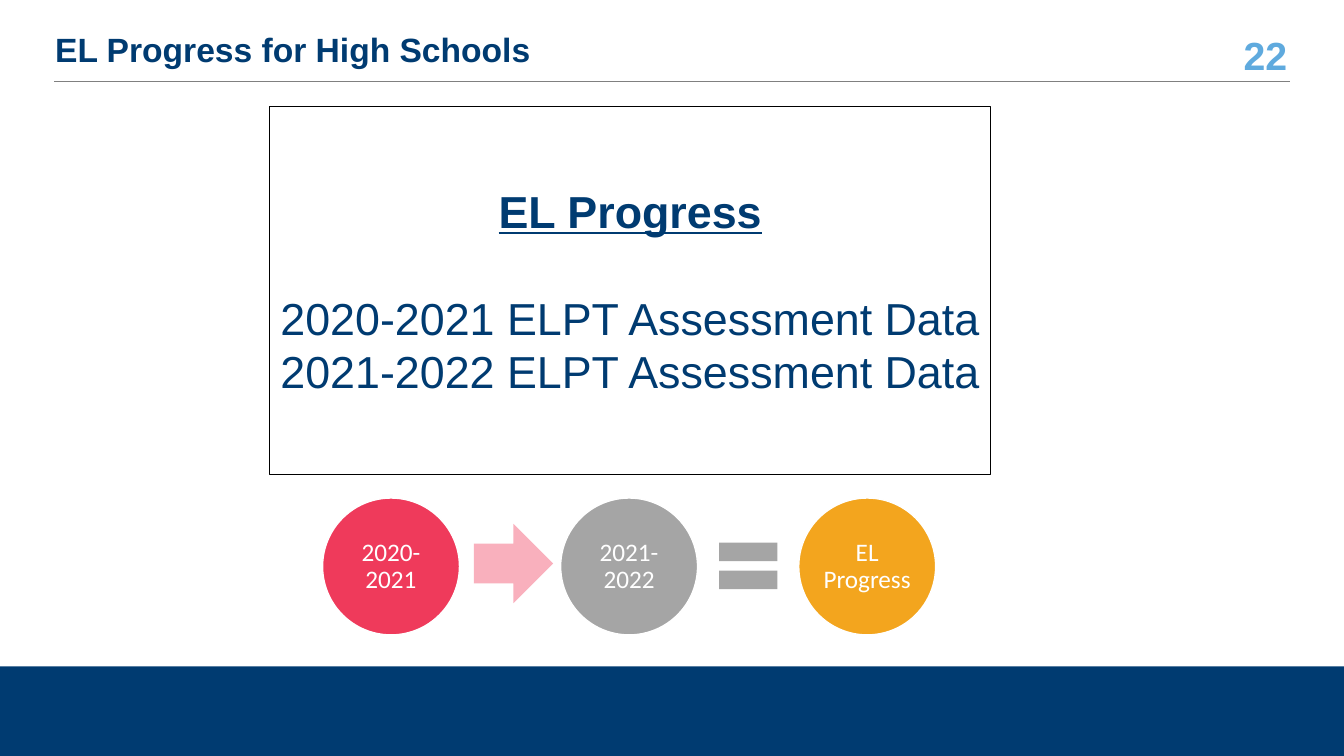
from pptx import Presentation
from pptx.dml.color import RGBColor
from pptx.enum import shapes, text
from pptx.oxml.ns import qn
from pptx.util import Cm, Pt

TITLE = "EL Progress for High Schools"
PAGE_NUMBER = "22"
PANEL_HEADING = "EL Progress"
PANEL_LINES = ["2020-2021 ELPT Assessment Data", "2021-2022 ELPT Assessment Data"]
CIRCLES = [("2020-2021", "red"), ("2021-2022", "gray"), ("EL Progress", "gold")]
# shape, colour, left offset from the circle before it, top (cm)
OPERATORS = [
    (shapes.MSO_SHAPE.RIGHT_ARROW, "pink", 3.81, 13.2),
    (shapes.MSO_SHAPE.MATH_EQUAL, "gray", 3.73, 13.26),
]

THEME = {
    "colors": {
        "navy": "003B71", "sky": "5FAADE", "rule": "808080", "black": "000000",
        "white": "FFFFFF", "red": "EF3A5B", "pink": "F9B0BD", "gray": "A5A5A5",
        "gold": "F3A51E",
    },
    "sizes": {"title": 24, "number": 28, "panel": 32, "circle": 18},
    "fonts": {"main": "Arial", "circle": "Calibri"},
}

PAGE_WIDTH, PAGE_HEIGHT = 33.87, 19.05
FOOTER_TOP = 16.79
CIRCLE_LEFT, CIRCLE_TOP, CIRCLE_SIZE, CIRCLE_STEP = 8.13, 12.55, 3.45, 6.0
OPERATOR_SIZE = 2.0


def color(name):
    return RGBColor.from_string(THEME["colors"][name])


def add_shape(page, kind, left, top, width, height, fill=None, line=None, weight=1):
    shape = page.shapes.add_shape(kind, Cm(left), Cm(top), Cm(width), Cm(height))
    shape.shadow.inherit = False
    if fill:
        shape.fill.solid()
        shape.fill.fore_color.rgb = color(fill)
    else:
        shape.fill.background()
    if line:
        shape.line.color.rgb = color(line)
        shape.line.width = Pt(weight)
    else:
        shape.line.fill.background()
    return shape


def write(box, lines, size, tint, align, font="main", bold=False, wrap=True):
    """Fill a shape with vertically centred paragraphs and return them."""
    frame = box.text_frame
    frame.word_wrap = wrap
    frame.vertical_anchor = text.MSO_ANCHOR.MIDDLE
    frame.text = "\n".join(lines)
    for para in frame.paragraphs:
        para.alignment = align
        para.font.name = THEME["fonts"][font]
        para.font.size = Pt(THEME["sizes"][size])
        para.font.bold = bold
        para.font.color.rgb = color(tint)
    return frame.paragraphs


def add_header(page):
    title = page.shapes.add_textbox(Cm(1.14), Cm(0.76), Cm(29.46), Cm(1.07))
    para = write(title, [TITLE], "title", "navy", text.PP_ALIGN.LEFT, bold=True)[0]
    para.line_spacing = 0.9
    number = page.shapes.add_textbox(Cm(30.66), Cm(0.84), Cm(2.03), Cm(1.07))
    write(number, [PAGE_NUMBER], "number", "sky", text.PP_ALIGN.RIGHT, bold=True)
    rule = page.shapes.add_connector(
        shapes.MSO_CONNECTOR.STRAIGHT, Cm(1.37), Cm(2.05), Cm(32.51), Cm(2.05))
    rule.line.color.rgb = color("rule")
    rule.line.width = Pt(0.5)
    properties = rule._element.spPr
    properties.append(properties.makeelement(qn("a:effectLst"), {}))


def add_panel(page):
    panel = add_shape(page, shapes.MSO_SHAPE.RECTANGLE, 6.8, 2.69, 18.17, 9.27,
                      line="black", weight=0.75)
    heading = write(panel, [PANEL_HEADING, *PANEL_LINES], "panel", "navy",
                    text.PP_ALIGN.CENTER, wrap=False)[0]
    heading.font.bold = True
    heading.font.underline = True
    heading.space_after = Pt(38)


def add_equation(page):
    for index, (label, fill) in enumerate(CIRCLES):
        left = CIRCLE_LEFT + index * CIRCLE_STEP
        circle = add_shape(page, shapes.MSO_SHAPE.OVAL, left, CIRCLE_TOP,
                           CIRCLE_SIZE, CIRCLE_SIZE, fill, "white")
        frame = circle.text_frame
        frame.margin_left = frame.margin_right = Cm(0.06)
        frame.margin_top = frame.margin_bottom = Cm(0.06)
        para = write(circle, [label], "circle", "white",
                     text.PP_ALIGN.CENTER, font="circle")[0]
        para.line_spacing = 0.9
    for index, (kind, fill, offset, top) in enumerate(OPERATORS):
        left = CIRCLE_LEFT + index * CIRCLE_STEP + offset
        add_shape(page, kind, left, top, OPERATOR_SIZE, OPERATOR_SIZE, fill)


def main():
    deck = Presentation()
    deck.slide_width, deck.slide_height = Cm(PAGE_WIDTH), Cm(PAGE_HEIGHT)
    page = deck.slides.add_slide(deck.slide_layouts[6])
    add_shape(page, shapes.MSO_SHAPE.RECTANGLE, 0, FOOTER_TOP,
              PAGE_WIDTH, PAGE_HEIGHT - FOOTER_TOP, "navy")
    add_header(page)
    add_equation(page)
    add_panel(page)
    deck.save("out.pptx")


if __name__ == "__main__":
    main()
